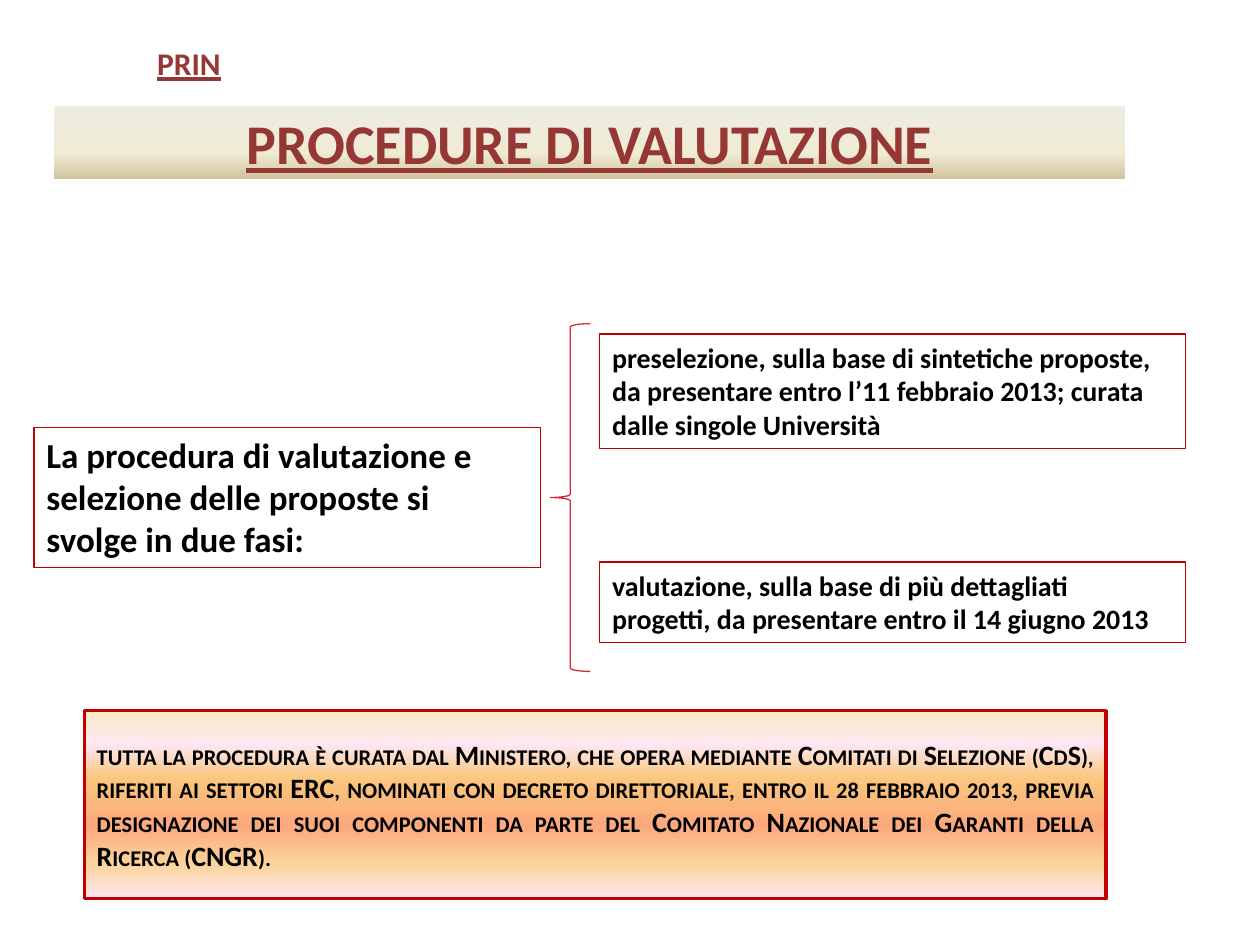
from lxml import etree
from pptx import Presentation
from pptx.dml.color import RGBColor
from pptx.enum.shapes import MSO_SHAPE
from pptx.enum.text import MSO_ANCHOR, MSO_AUTO_SIZE, PP_ALIGN
from pptx.oxml.ns import qn
from pptx.util import Pt

RECTANGLE, LEFT_BRACE = MSO_SHAPE.RECTANGLE, MSO_SHAPE.LEFT_BRACE
TOP, MIDDLE = MSO_ANCHOR.TOP, MSO_ANCHOR.MIDDLE
FIXED, GROW = MSO_AUTO_SIZE.NONE, MSO_AUTO_SIZE.SHAPE_TO_FIT_TEXT
LEFT, CENTER, JUSTIFY = PP_ALIGN.LEFT, PP_ALIGN.CENTER, PP_ALIGN.JUSTIFY

TITLE_ONLY = 5
FONT = "Calibri"
BLACK, MAROON, RED, BRACE_RED = "000000", "953735", "C00000", "D92B3C"
TITLE_STOPS = [(0, "EEECE1"), (65, "F0EBD5"), (100, "D1C39F")]
NOTE_STOPS = [(0, "FBEAC7"), (18, "FEE7F2"), (36, "FAC77D"),
              (61, "FBA97D"), (82, "FBD49C"), (100, "FEE7F2")]

LEAD = "La procedura di valutazione e selezione delle proposte si svolge in due fasi:"
PHASES = [  # offset from the top of the region, height, text
    (5.8, 65.5, "preselezione, sulla base di sintetiche proposte, da presentare "
                "entro l’11 febbraio 2013; curata dalle singole Università"),
    (136.1, 46.1, "valutazione, sulla base di più dettagliati progetti, "
                  "da presentare entro il 14 giugno 2013"),
]
NOTE = ("tutta la procedura è curata dal Ministero, che opera mediante Comitati di "
        "Selezione (CdS), riferiti ai settori ERC, nominati con decreto direttoriale, "
        "entro il 28 febbraio 2013, previa designazione dei suoi componenti da parte "
        "del Comitato Nazionale dei Garanti della Ricerca (CNGR).")


def color(value):
    return RGBColor.from_string(value)


def set_gradient(shape, stops):
    """Fill from top to bottom with (percent, colour) stops."""
    shape.fill.gradient()
    shape.fill.gradient_angle = 270
    stop_list = shape._element.spPr.find(".//" + qn("a:gsLst"))
    for old_stop in list(stop_list):
        stop_list.remove(old_stop)
    for percent, value in stops:
        stop = etree.SubElement(stop_list, qn("a:gs"), pos=str(percent * 1000))
        etree.SubElement(stop, qn("a:srgbClr"), val=value)


def write(shape, text, size, value=BLACK, align=LEFT, anchor=TOP, auto_size=FIXED,
          underline=None):
    frame = shape.text_frame
    frame_format = {"word_wrap": True, "auto_size": auto_size, "vertical_anchor": anchor}
    for name, setting in frame_format.items():
        setattr(frame, name, setting)
    paragraph = frame.paragraphs[0]
    paragraph.alignment = align
    run = paragraph.add_run()
    run.text = text
    font_format = {"name": FONT, "size": Pt(size), "bold": True, "underline": underline}
    for name, setting in font_format.items():
        setattr(run.font, name, setting)
    run.font.color.rgb = color(value)
    return run


def add_outline(slide, kind, box, line=RED, width=0.75):
    """Add an unfilled, unshadowed preset shape."""
    shape = slide.shapes.add_shape(kind, *map(Pt, box))
    shape.shadow.inherit = False
    shape.fill.background()
    shape.line.color.rgb = color(line)
    shape.line.width = Pt(width)
    return shape


def add_header(slide, box):
    left, top, width, height = box
    bar_height = 41.8
    heading = {"value": MAROON, "align": CENTER, "anchor": MIDDLE, "underline": True}

    title = slide.shapes.title
    place = {"left": left + 16.6, "top": top + height - bar_height,
             "width": width - 16.6, "height": bar_height}
    for name, length in place.items():
        setattr(title, name, Pt(length))
    set_gradient(title, TITLE_STOPS)
    write(title, "PROCEDURE DI VALUTAZIONE", 32, **heading)

    label = slide.shapes.add_textbox(Pt(left), Pt(top), Pt(187.2), Pt(bar_height))
    write(label, "PRIN", 18, **heading)


def add_phases(slide, box):
    """Place the lead text, the brace and the two phases it opens to."""
    left, top, width, height = box
    lead_width, lead_height, phase_width = 289.4, 79.9, 334.8
    lead_top = top + (height - lead_height) / 2
    lead = add_outline(slide, RECTANGLE, (left, lead_top, lead_width, lead_height))
    write(lead, LEAD, 20, auto_size=GROW)

    phase_left = left + width - phase_width
    for offset, phase_height, text in PHASES:
        phase = add_outline(slide, RECTANGLE,
                            (phase_left, top + offset, phase_width, phase_height))
        write(phase, text, 16, auto_size=GROW)

    add_outline(slide, LEFT_BRACE, (phase_left - 28.3, top, 23, height), BRACE_RED)


def add_note(slide, box):
    note = add_outline(slide, RECTANGLE, box, width=2)
    set_gradient(note, NOTE_STOPS)
    run = write(note, NOTE, 16, align=JUSTIFY, anchor=MIDDLE)
    run._r.get_or_add_rPr().set("cap", "small")


def main():
    presentation = Presentation()
    presentation.slide_width, presentation.slide_height = Pt(720), Pt(540)
    slide = presentation.slides.add_slide(presentation.slide_layouts[TITLE_ONLY])
    add_header(slide, (14.4, 15.1, 628.6, 87.2))
    add_phases(slide, (19.4, 185, 658.1, 198.7))
    add_note(slide, (48.2, 406.1, 583.9, 107.3))
    presentation.save("out.pptx")


if __name__ == "__main__":
    main()
